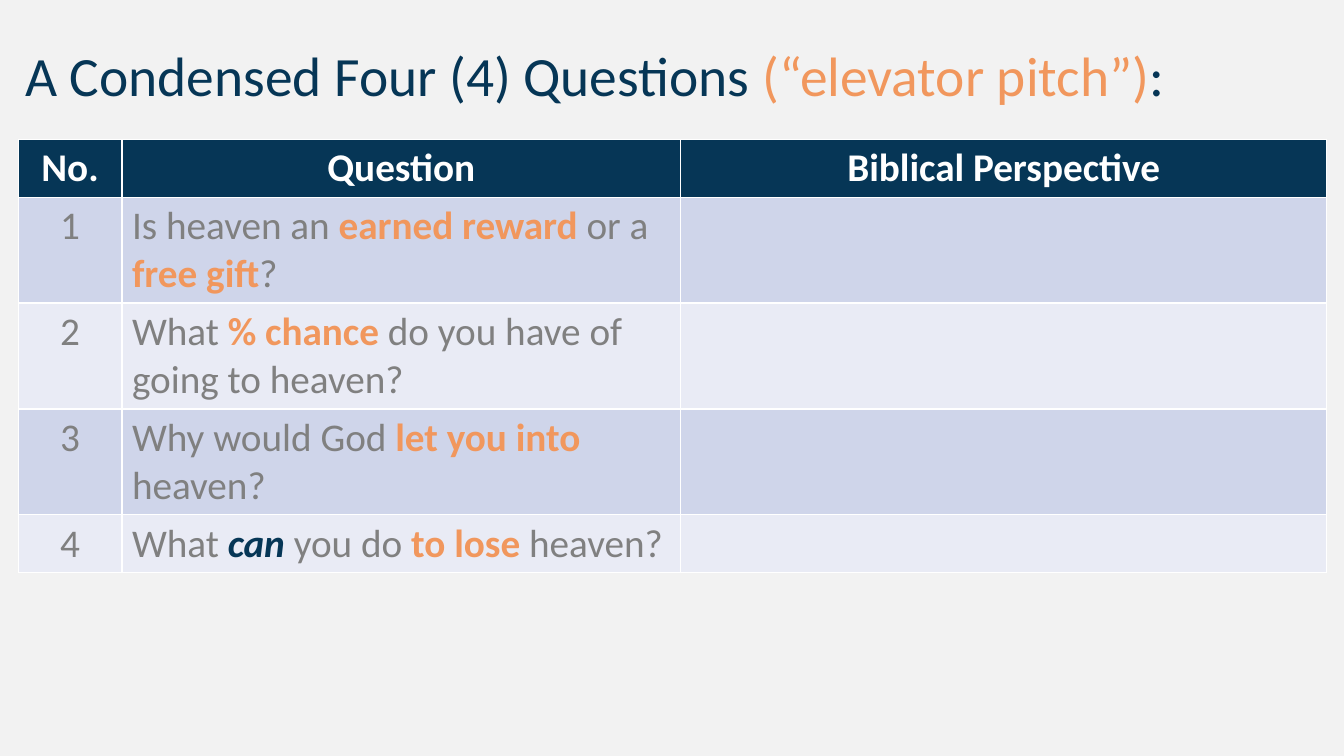
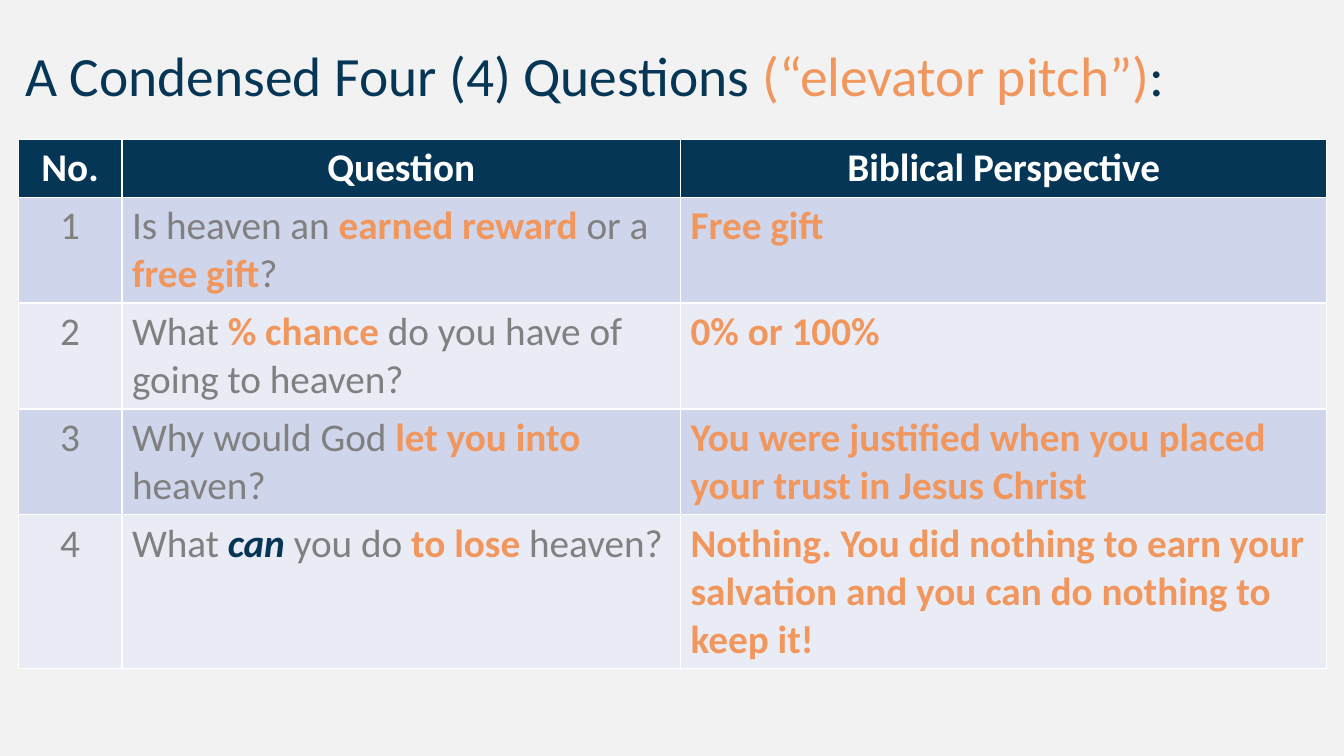
from dataclasses import dataclass

from pptx import Presentation
from pptx.dml.color import RGBColor as RGB
from pptx.enum.text import MSO_ANCHOR as Anchor, MSO_AUTO_SIZE as AutoSize, PP_ALIGN as Align
from pptx.util import Inches, Pt


@dataclass(frozen=True)
class Theme:
    font: str = "Calibri"
    title_size: float = 39.6
    table_size: float = 28
    paper: RGB = RGB(0xF2, 0xF2, 0xF2)
    navy: RGB = RGB(0x06, 0x36, 0x56)
    orange: RGB = RGB(0xF1, 0x97, 0x5D)
    grey: RGB = RGB(0x80, 0x80, 0x80)
    white: RGB = RGB(0xFF, 0xFF, 0xFF)
    bands: tuple = (RGB(0xCF, 0xD5, 0xEA), RGB(0xE9, 0xEB, 0xF5))


THEME = Theme()


@dataclass(frozen=True)
class Run:
    text: str
    color: RGB = THEME.grey
    bold: bool = False
    italic: bool = False


def key(text):
    """Return a run in the bold accent style."""
    return Run(text, THEME.orange, bold=True)


TITLE = [
    Run("A Condensed Four (4) Questions ", THEME.navy),
    Run("(“elevator pitch”)", THEME.orange),
    Run(":", THEME.navy),
]
HEADINGS = ["No.", "Question", "Biblical Perspective"]
COLUMN_WIDTHS = [1.03, 5.54, 6.41]
QUESTIONS = [
    [Run("Is heaven an "), key("earned reward "), Run("or a "), key("free gift"), Run("?")],
    [Run("What "), key("% chance "), Run("do you have of going to heaven?")],
    [Run("Why would God "), key("let you into "), Run("heaven?")],
    [Run("What "), Run("can", THEME.navy, True, True), Run(" you do "),
     key("to lose "), Run("heaven?")],
]
NO_ANSWERS = [""] * len(QUESTIONS)
ANSWERS = [
    "Free gift",
    "0% or 100%",
    "You were justified when you placed your trust in Jesus Christ",
    "Nothing. You did nothing to earn your salvation and you can do nothing to keep it!",
]


class Deck:
    def __init__(self, theme):
        self.theme = theme
        self.prs = Presentation()
        self.prs.slide_width, self.prs.slide_height = Inches(13.33), Inches(7.5)
        fill = self.prs.slide_master.background.fill
        fill.solid()
        fill.fore_color.rgb = theme.paper
        self.s = None

    def add_slide(self):
        title_only = self.prs.slide_layouts[5]
        self.s = self.prs.slides.add_slide(title_only)

    def add_runs(self, p, runs, size, align=Align.LEFT):
        p.alignment = align
        for run in runs:
            r = p.add_run()
            r.text = run.text
            r.font.name, r.font.size = self.theme.font, Pt(size)
            r.font.bold, r.font.italic = run.bold, run.italic
            r.font.color.rgb = run.color

    def title(self, runs):
        sp = self.s.shapes.title
        sp.left, sp.top = Inches(0.15), Inches(0.4)
        sp.width, sp.height = Inches(12.97), Inches(0.76)
        tf = sp.text_frame
        tf.auto_size = AutoSize.NONE
        tf.vertical_anchor = Anchor.MIDDLE
        p = tf.paragraphs[0]
        p.line_spacing = 0.9
        self.add_runs(p, runs, self.theme.title_size)

    def cell(self, cell, runs, fill, align=Align.LEFT):
        cell.fill.solid()
        cell.fill.fore_color.rgb = fill
        self.add_runs(cell.text_frame.paragraphs[0], runs, self.theme.table_size, align)

    def table(self, questions, answers, line_counts):
        """Add the question table; line_counts gives the text lines in each body row."""
        theme = self.theme
        heights = [0.1 + 0.47 * lines for lines in [1, *line_counts]]
        frame = self.s.shapes.add_table(
            len(heights), len(COLUMN_WIDTHS), Inches(0.18), Inches(1.38),
            Inches(sum(COLUMN_WIDTHS)), Inches(sum(heights)))
        table = frame.table
        for column, width in zip(table.columns, COLUMN_WIDTHS):
            column.width = Inches(width)
        for row, height in zip(table.rows, heights):
            row.height = Inches(height)

        for col, heading in enumerate(HEADINGS):
            self.cell(table.cell(0, col), [Run(heading, theme.white, bold=True)],
                      theme.navy, Align.CENTER)
        for n, (question, answer) in enumerate(zip(questions, answers), start=1):
            band = theme.bands[(n - 1) % 2]
            self.cell(table.cell(n, 0), [Run(str(n))], band, Align.CENTER)
            self.cell(table.cell(n, 1), question, band)
            self.cell(table.cell(n, 2), [key(answer)] if answer else [], band)


def main():
    deck = Deck(THEME)
    for answers, line_counts in [(NO_ANSWERS, [2, 2, 2, 1]), (ANSWERS, [2, 2, 2, 3])]:
        deck.add_slide()
        deck.title(TITLE)
        deck.table(QUESTIONS, answers, line_counts)
    deck.prs.save("out.pptx")


if __name__ == "__main__":
    main()
